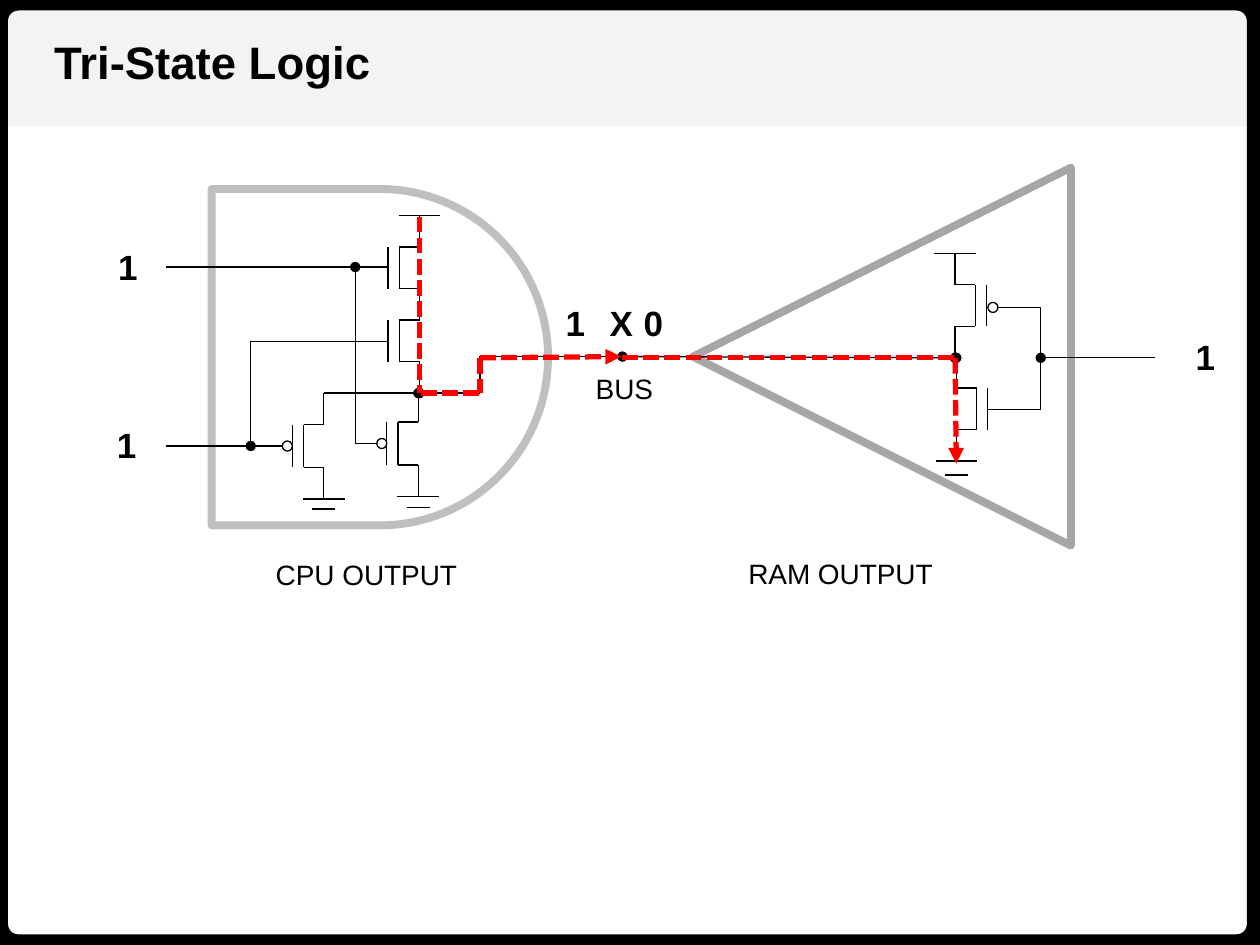
from dataclasses import dataclass

from lxml.etree import SubElement
from pptx import Presentation
from pptx.dml.color import RGBColor
from pptx.enum.dml import MSO_LINE
from pptx.enum.shapes import MSO_CONNECTOR, MSO_SHAPE
from pptx.enum.text import MSO_ANCHOR, MSO_AUTO_SIZE, PP_ALIGN
from pptx.oxml.ns import qn
from pptx.util import Inches, Pt


@dataclass(frozen=True)
class Theme:
    font: str = "Arial"
    ink: str = "000000"
    paper: str = "FFFFFF"
    band: str = "F3F3F3"
    cpu: str = "BFBFBF"
    ram: str = "A6A6A6"
    current: str = "FF0000"
    title_size: float = 26
    bit_size: float = 20
    label_size: float = 16
    wire: float = 0.75
    current_line: float = 3
    gate_line: float = 4.5
    frame_line: float = 12


THEME = Theme()
CHANNEL, GATE, BAR, BUBBLE = 0.16, 0.25, 0.33, 0.08


def add_outline(slide, kind, box, line=None, width=0, fill=None):
    shape = slide.shapes.add_shape(kind, *map(Inches, box))
    shape.shadow.inherit = False
    if fill:
        shape.fill.solid()
        shape.fill.fore_color.rgb = RGBColor.from_string(fill)
    else:
        shape.fill.background()
    if line:
        shape.line.color.rgb = RGBColor.from_string(line)
        shape.line.width = Pt(width)
    else:
        shape.line.fill.background()
    return shape


def add_wire(slide, start, end, head=None, tail=None, bend=None,
             color=THEME.ink, width=THEME.wire, dash=None):
    kind = MSO_CONNECTOR.STRAIGHT if bend is None else MSO_CONNECTOR.ELBOW
    wire = slide.shapes.add_connector(kind, *map(Inches, (*start, *end)))
    wire.line.color.rgb = RGBColor.from_string(color)
    wire.line.width = Pt(width)
    if dash:
        wire.line.dash_style = dash
    properties = wire._element.spPr
    line = properties.find(qn("a:ln"))
    for tag, ending in (("a:headEnd", head), ("a:tailEnd", tail)):
        if ending:
            SubElement(line, qn(tag)).set("type", ending)
    SubElement(properties, qn("a:effectLst"))
    if bend is not None:
        geometry = properties.find(qn("a:prstGeom"))
        guide = SubElement(geometry.find(qn("a:avLst")), qn("a:gd"))
        guide.set("name", "adj1")
        guide.set("fmla", f"val {round(bend * 100000)}")


def add_current(slide, start, end, tail=None):
    add_wire(slide, start, end, tail=tail, color=THEME.current,
             width=THEME.current_line, dash=MSO_LINE.SQUARE_DOT)


def add_transistor(slide, x, levels, side, head=None, tail=None):
    supply, upper, lower, output = levels
    channel, gate = x + side * CHANNEL, x + side * GATE
    points = [(x, supply), (x, upper), (channel, upper),
              (channel, lower), (x, lower), (x, output)]
    last = len(points) - 2
    for index, (start, end) in enumerate(zip(points, points[1:])):
        if start != end:
            add_wire(slide, start, end,
                     head=head if index == 0 else None,
                     tail=tail if index == last else None)
    add_wire(slide, (gate, upper), (gate, lower))


def add_bar(slide, x, y, width=BAR):
    add_wire(slide, (x - width / 2, y), (x + width / 2, y))


def add_ground(slide, x, y, gap):
    add_bar(slide, x, y)
    add_bar(slide, x, y + gap, 0.18)


def add_bubble(slide, x, y, fill=None):
    add_outline(slide, MSO_SHAPE.OVAL, (x, y, BUBBLE, BUBBLE),
                THEME.ink, THEME.wire, fill)


def format_text(shape, text, size, bold):
    frame = shape.text_frame
    frame.text = text
    frame.word_wrap = False
    frame.auto_size = MSO_AUTO_SIZE.SHAPE_TO_FIT_TEXT
    frame.vertical_anchor = MSO_ANCHOR.TOP
    paragraph = frame.paragraphs[0]
    paragraph.alignment = PP_ALIGN.LEFT
    font = paragraph.runs[0].font
    font.name, font.size, font.bold = THEME.font, Pt(size), bold
    font.color.rgb = RGBColor.from_string(THEME.ink)


def add_label(slide, text, box, size=THEME.label_size, bold=False):
    shape = slide.shapes.add_textbox(*map(Inches, box))
    format_text(shape, text, size, bold)


def add_bit(slide, text, x, y, width=0.36):
    add_label(slide, text, (x, y, width, 0.44), THEME.bit_size, True)


def add_background(slide):
    add_outline(slide, MSO_SHAPE.RECTANGLE, (0, 0, 10, 1), fill=THEME.band)
    frame = add_outline(slide, MSO_SHAPE.ROUNDED_RECTANGLE,
                        (-0.02, 0, 10, 7.5), THEME.ink, THEME.frame_line)
    frame.adjustments[0] = 0.022


def add_title(slide, text):
    title = slide.shapes.title
    title.left, title.top = Inches(0.33), Inches(0.22)
    title.width, title.height = Inches(2.74), Inches(0.54)
    format_text(title, text, THEME.title_size, True)
    slide.shapes._spTree.append(title._element)


def add_cpu(slide):
    add_outline(slide, MSO_SHAPE.FLOWCHART_DELAY, (1.68, 1.5, 2.67, 2.67),
                THEME.cpu, THEME.gate_line)
    add_transistor(slide, 3.33, (1.71, 1.96, 2.29, 2.54), -1)
    add_transistor(slide, 3.33, (2.54, 2.54, 2.87, 3.12), -1, tail="oval")
    add_transistor(slide, 2.57, (3.12, 3.37, 3.71, 3.96), -1)
    add_transistor(slide, 3.32, (3.12, 3.35, 3.69, 3.94), -1, head="oval")
    add_bubble(slide, 2.24, 3.5)
    add_bubble(slide, 2.99, 3.48)
    add_bar(slide, 3.33, 1.71)
    add_ground(slide, 2.57, 3.96, 0.08)
    add_ground(slide, 3.32, 3.94, 0.09)
    add_wire(slide, (2.57, 3.12), (3.81, 3.12))
    add_wire(slide, (1.32, 2.12), (3.08, 2.12))
    add_wire(slide, (1.32, 3.54), (2.24, 3.54))
    add_wire(slide, (2.99, 3.52), (2.82, 2.12), tail="oval", bend=1)
    add_wire(slide, (3.07, 2.71), (1.99, 3.54), tail="oval", bend=1)
    add_wire(slide, (3.81, 3.12), (4.74, 2.83), bend=0)


def add_ram(slide):
    triangle = add_outline(slide, MSO_SHAPE.ISOSCELES_TRIANGLE,
                           (5.5, 1.33, 3, 3), THEME.ram, THEME.gate_line)
    triangle.rotation = 270
    add_transistor(slide, 7.58, (2.01, 2.26, 2.59, 2.84), 1, tail="oval")
    add_transistor(slide, 7.59, (2.84, 3.08, 3.41, 3.66), 1, head="oval")
    add_bar(slide, 7.58, 2.01)
    add_ground(slide, 7.59, 3.66, 0.11)
    add_wire(slide, (9.17, 2.84), (8.26, 2.84), tail="oval")
    add_wire(slide, (8.26, 2.84), (7.85, 2.44), bend=0)
    add_wire(slide, (8.26, 2.84), (7.84, 3.25), bend=0)
    add_bubble(slide, 7.84, 2.4, THEME.paper)


def add_bus(slide):
    add_wire(slide, (4.74, 2.83), (4.94, 2.83), tail="oval")
    add_wire(slide, (4.94, 2.83), (7.58, 2.84))


def add_current_path(slide):
    add_current(slide, (4.94, 2.84), (7.59, 2.84))
    add_current(slide, (7.58, 2.84), (7.59, 3.68), "triangle")
    add_current(slide, (3.81, 2.84), (4.93, 2.83), "triangle")
    add_current(slide, (3.33, 1.72), (3.33, 3.12))
    add_current(slide, (3.34, 3.12), (3.81, 3.12))
    add_current(slide, (3.81, 2.84), (3.81, 3.12))


def main():
    presentation = Presentation()
    presentation.slide_width, presentation.slide_height = Inches(10), Inches(7.5)
    slide = presentation.slides.add_slide(presentation.slide_layouts[5])
    add_background(slide)
    add_title(slide, "Tri-State Logic")
    add_cpu(slide)
    add_ram(slide)
    add_bus(slide)
    add_current_path(slide)
    for text, x, y in (("1", 0.84, 1.9), ("1", 0.83, 3.31), ("1", 9.39, 2.61),
                       ("1", 4.39, 2.34), ("0", 5.01, 2.34)):
        add_bit(slide, text, x, y)
    add_bit(slide, "X", 4.74, 2.34, 0.39)
    add_label(slide, "BUS", (4.63, 2.9, 0.66, 0.37))
    add_label(slide, "CPU OUTPUT", (2.09, 4.38, 1.66, 0.37))
    add_label(slide, "RAM OUTPUT", (5.84, 4.37, 1.68, 0.37))
    presentation.save("out.pptx")


if __name__ == "__main__":
    main()
